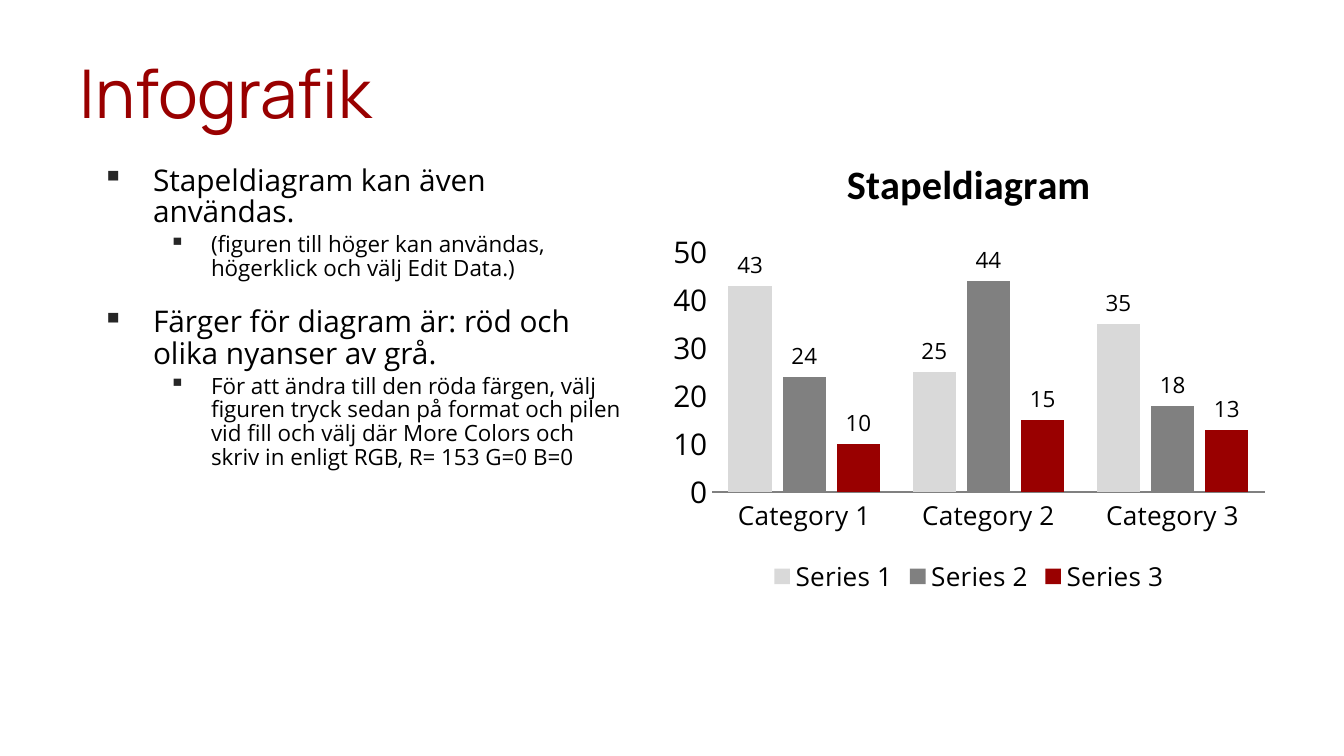
from lxml import etree
from pptx import Presentation
from pptx.chart.data import CategoryChartData
from pptx.dml.color import RGBColor
from pptx.enum.chart import XL_CHART_TYPE, XL_LABEL_POSITION, XL_LEGEND_POSITION, XL_TICK_MARK
from pptx.oxml.ns import qn
from pptx.util import Emu, Pt

COLUMNS = XL_CHART_TYPE.COLUMN_CLUSTERED
OUTSIDE = XL_LABEL_POSITION.OUTSIDE_END
BOTTOM = XL_LEGEND_POSITION.BOTTOM
NO_TICK = XL_TICK_MARK.NONE

RED = RGBColor(0x99, 0x00, 0x00)
BLACK = RGBColor(0x00, 0x00, 0x00)
LIGHT_GRAY = RGBColor(0xD9, 0xD9, 0xD9)
GRAY = RGBColor(0x80, 0x80, 0x80)
BULLET = RGBColor(0x26, 0x26, 0x26)

# Slide size in px, and EMU in one px
WIDTH, HEIGHT = 1344, 756
SCALE = 9144000 / WIDTH

# Size, indent and hanging indent by outline level
LEVELS = [
    {"size": 16, "left": 51, "hang": 51},
    {"size": 12, "left": 109, "hang": 42},
]


def px(n):
    return Emu(round(n * SCALE))


class Deck:
    heading_font = "Manrope"
    body_font = "Open Sans"
    chart_font = "Calibri"

    def __init__(self):
        self.prs = Presentation()
        self.prs.slide_width, self.prs.slide_height = px(WIDTH), px(HEIGHT)
        self.s = self.prs.slides.add_slide(self.prs.slide_layouts[6])

    def style(self, font, size, name=body_font, color=BLACK, bold=False):
        for key, value in {"name": name, "size": Pt(size), "bold": bold}.items():
            setattr(font, key, value)
        font.color.rgb = color

    def box(self, x, y, w, h, top):
        tf = self.s.shapes.add_textbox(px(x), px(y), px(w), px(h)).text_frame
        margins = {"margin_left": 13, "margin_right": 13, "margin_top": top, "margin_bottom": 7}
        for key, value in margins.items():
            setattr(tf, key, px(value))
        tf.word_wrap = True
        return tf

    def title(self, text, x, y, w, h):
        p = self.box(x, y, w, h, 3).paragraphs[0]
        r = p.add_run()
        r.text = text
        self.style(r.font, 36, self.heading_font, RED)

    def bullets(self, items, x, y, w, h):
        tf = self.box(x, y, w, h, 9)
        for i, (level, space, text) in enumerate(items):
            p = tf.add_paragraph() if i else tf.paragraphs[0]
            fmt = LEVELS[level]
            pPr = p._p.get_or_add_pPr()
            pPr.set("marL", str(px(fmt["left"])))
            pPr.set("indent", str(px(-fmt["hang"])))
            clr = etree.SubElement(pPr, qn("a:buClr"))
            etree.SubElement(clr, qn("a:srgbClr"), val=str(BULLET))
            etree.SubElement(pPr, qn("a:buChar"), char="▪")
            p.level = level
            p.line_spacing = 0.88
            if i:
                p.space_before = Pt(space)
            r = p.add_run()
            r.text = text
            self.style(r.font, fmt["size"])

    def column_chart(self, title, categories, series, x, y, w, h):
        data = CategoryChartData()
        data.categories = categories
        for name, values, _ in series:
            data.add_series(name, values)
        chart = self.s.shapes.add_chart(COLUMNS, px(x), px(y), px(w), px(h), data).chart
        self.style(chart.font, 18, self.chart_font)

        # Title and legend
        chart.has_title = True
        r = chart.chart_title.text_frame.paragraphs[0].add_run()
        r.text = title
        self.style(r.font, 21.6, self.chart_font, bold=True)
        chart.chart_title.include_in_layout = False
        chart.has_legend = True
        chart.legend.position = BOTTOM
        chart.legend.include_in_layout = False
        self.style(chart.legend.font, 14)

        # Axes
        for axis, size in ((chart.category_axis, 14), (chart.value_axis, 16)):
            axis.has_major_gridlines = False
            axis.major_tick_mark = axis.minor_tick_mark = NO_TICK
            self.style(axis.tick_labels.font, size)
        chart.category_axis.format.line.color.rgb = GRAY
        value_axis = chart.value_axis
        value_axis.format.line.fill.background()
        for key, value in {"minimum_scale": 0, "maximum_scale": 50, "major_unit": 10}.items():
            setattr(value_axis, key, value)

        # Columns and their values
        plot = chart.plots[0]
        for key, value in {"gap_width": 75, "overlap": -25, "vary_by_categories": False}.items():
            setattr(plot, key, value)
        for column, (_, _, color) in zip(plot.series, series):
            column.format.fill.solid()
            column.format.fill.fore_color.rgb = color
            labels = column.data_labels
            labels.show_value = True
            labels.position = OUTSIDE
            self.style(labels.font, 12)


def main():
    deck = Deck()
    deck.title("Infografik", 67, 48, 1210, 126)

    # Outline: level, space before in points, text
    deck.bullets([
        (0, 0, "Stapeldiagram kan även användas."),
        (1, 2.4, "(figuren till höger kan användas, högerklick och välj Edit Data.)"),
        (0, 14.4, "Färger för diagram är: röd och olika nyanser av grå."),
        (1, 2.4, "För att ändra till den röda färgen, välj figuren tryck sedan på format "
                 "och pilen vid fill och välj där More Colors och skriv in enligt RGB, "
                 "R= 153 G=0 B=0"),
    ], 89, 157, 551, 590)

    deck.column_chart(
        "Stapeldiagram",
        ["Category 1", "Category 2", "Category 3"],
        [
            ("Series 1", (43, 25, 35), LIGHT_GRAY),
            ("Series 2", (24, 44, 18), GRAY),
            ("Series 3", (10, 15, 13), RED),
        ],
        661, 132, 616, 468,
    )
    deck.prs.save("out.pptx")


if __name__ == "__main__":
    main()
